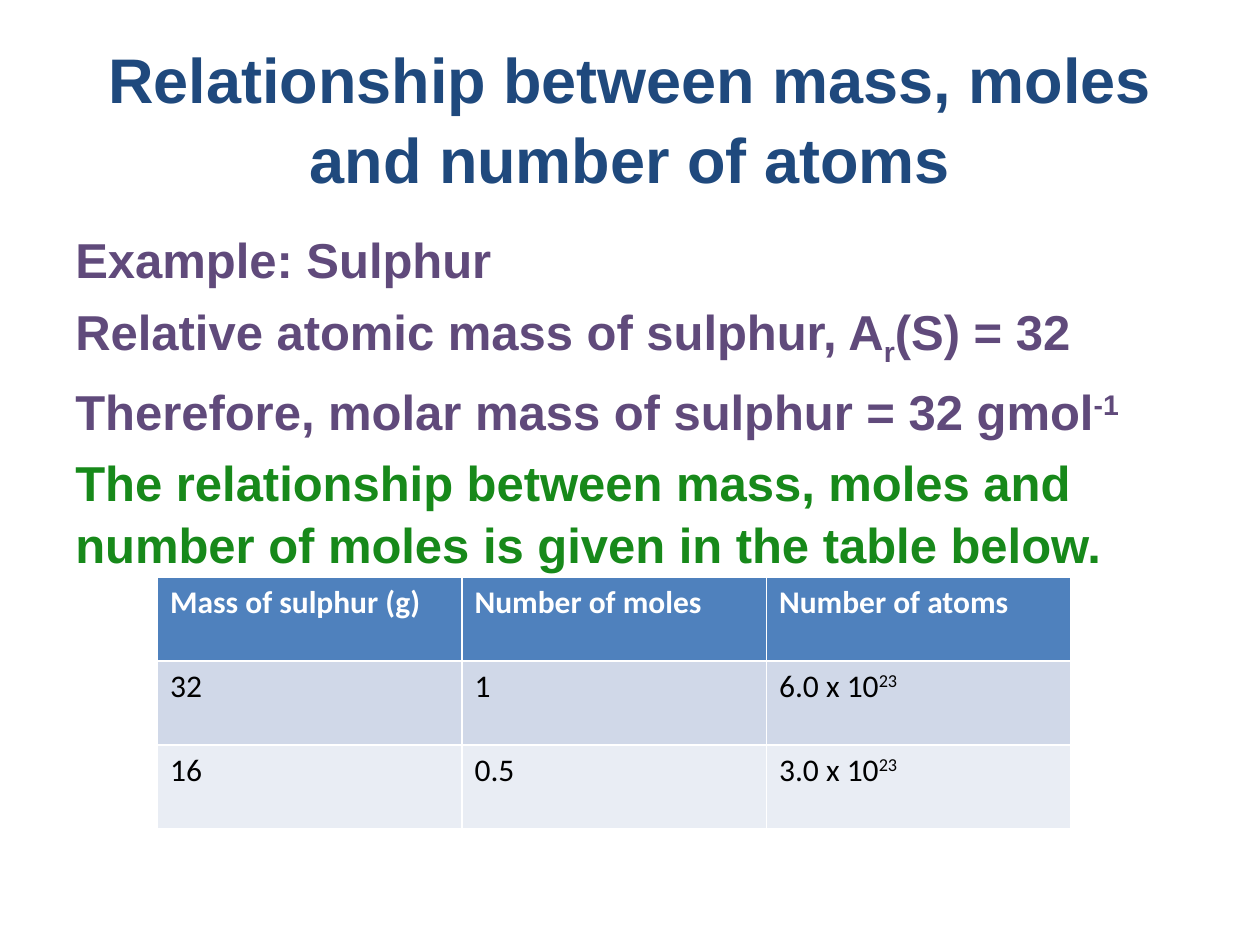
from pptx import Presentation
from pptx.dml.color import RGBColor
from pptx.enum.text import MSO_ANCHOR, PP_ALIGN
from pptx.util import Inches, Pt

MIDDLE = MSO_ANCHOR.MIDDLE
TOP = MSO_ANCHOR.TOP
CENTER = PP_ALIGN.CENTER
LEFT = PP_ALIGN.LEFT

NAVY = RGBColor(0x1F, 0x49, 0x7D)
PURPLE = RGBColor(0x60, 0x4A, 0x7B)
GREEN = RGBColor(0x17, 0x89, 0x1A)
WHITE = RGBColor(0xFF, 0xFF, 0xFF)
BLACK = RGBColor(0x00, 0x00, 0x00)
HEADER_BLUE = RGBColor(0x4F, 0x81, 0xBD)
BAND_FILLS = [RGBColor(0xD0, 0xD8, 0xE8), RGBColor(0xE9, 0xED, 0xF4)]

SUBSCRIPT = -25000
SUPERSCRIPT = 30000

TITLE = "Relationship between mass, moles and number of atoms"
BODY = [
    ([("Example: Sulphur", 0)], PURPLE),
    ([("Relative atomic mass of sulphur, A", 0), ("r", SUBSCRIPT), ("(S) = 32", 0)], PURPLE),
    ([("Therefore, molar mass of sulphur = 32 gmol", 0), ("-1", SUPERSCRIPT)], PURPLE),
    ([("The relationship between mass, moles and number of moles "
       "is given in the table below.", 0)], GREEN),
]
TABLE_ROWS = [
    [[("Mass of sulphur (g)", 0)], [("Number of moles", 0)], [("Number of atoms", 0)]],
    [[("32", 0)], [("1", 0)], [("6.0 x 10", 0), ("23", SUPERSCRIPT)]],
    [[("16", 0)], [("0.5", 0)], [("3.0 x 10", 0), ("23", SUPERSCRIPT)]],
]


def set_attributes(target, values):
    for name, value in values.items():
        setattr(target, name, value)


def add_runs(paragraph, parts, size, font_name, color, bold):
    for text, baseline in parts:
        run = paragraph.add_run()
        run.text = text
        set_attributes(run.font, {"size": Pt(size), "name": font_name, "bold": bold})
        run.font.color.rgb = color
        if baseline:
            run.font._element.set("baseline", str(baseline))


def add_text(slide, box, lines, size, paragraph_format, anchor):
    frame = slide.shapes.add_textbox(*map(Inches, box)).text_frame
    set_attributes(frame, {"word_wrap": True, "vertical_anchor": anchor})
    for index, (parts, color) in enumerate(lines):
        paragraph = frame.add_paragraph() if index else frame.paragraphs[0]
        set_attributes(paragraph, paragraph_format)
        add_runs(paragraph, parts, size, "Arial", color, True)


def add_mole_table(slide, box, rows):
    frame = slide.shapes.add_table(len(rows), len(rows[0]), *map(Inches, box))
    for row_index, row in enumerate(rows):
        is_header = row_index == 0
        fill = HEADER_BLUE if is_header else BAND_FILLS[(row_index - 1) % 2]
        for column_index, parts in enumerate(row):
            cell = frame.table.cell(row_index, column_index)
            cell.fill.solid()
            cell.fill.fore_color.rgb = fill
            add_runs(cell.text_frame.paragraphs[0], parts, 18, "Calibri",
                     WHITE if is_header else BLACK, is_header)


def main():
    presentation = Presentation()
    set_attributes(presentation, {"slide_width": Inches(10), "slide_height": Inches(7.5)})
    slide = presentation.slides.add_slide(presentation.slide_layouts[6])
    add_text(slide, (0.5, 0.3, 9, 1.25), [([(TITLE, 0)], NAVY)], 36,
             {"alignment": CENTER, "line_spacing": 1.05}, MIDDLE)
    add_text(slide, (0.5, 1.75, 9, 4.95), BODY, 28,
             {"alignment": LEFT, "line_spacing": 1.05, "space_before": Pt(5.6)}, TOP)
    add_mole_table(slide, (1.25, 4.58, 7.25, 2), TABLE_ROWS)
    presentation.save("out.pptx")


if __name__ == "__main__":
    main()
